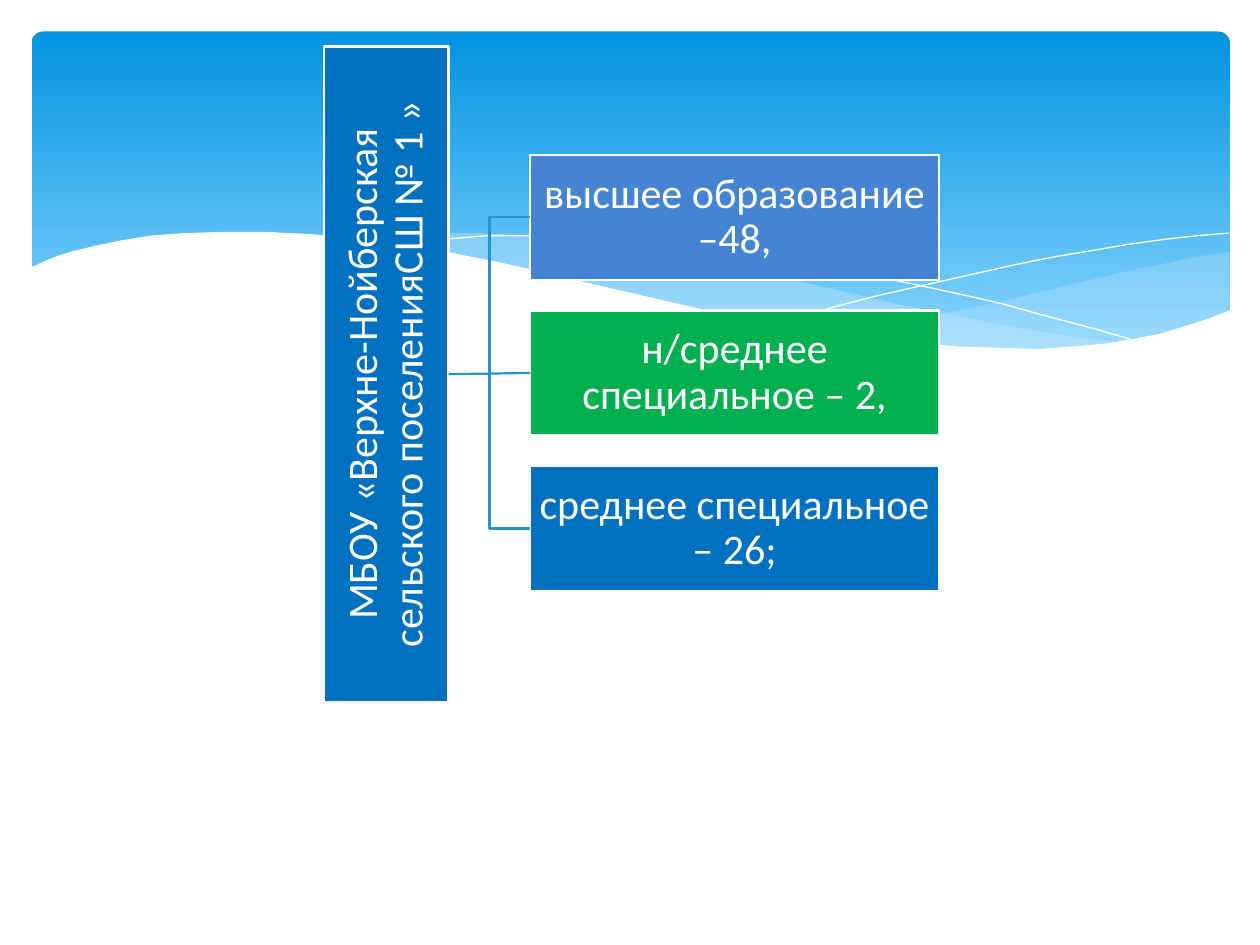
"""Build a slide with a school's staff education hierarchy over a wavy sky banner."""
import lxml.etree
import pptx
import pptx.dml.color
import pptx.enum.dml
import pptx.enum.shapes
import pptx.enum.text
import pptx.oxml.ns
import pptx.util

Inches, Pt = pptx.util.Inches, pptx.util.Pt
qn = pptx.oxml.ns.qn

COLORS = {
    "sky_top": "0293E0", "sky_bottom": "83D3FE", "mist": "C6E7FC", "white": "FFFFFF",
    "blue": "0070C0", "light_blue": "4584D3", "green": "00B050", "link": "2792CB",
}
FONT, TEXT_SIZE = "Calibri", 24

SCHOOL = "МБОУ «Верхне-Нойберская сельского поселенияСШ № 1 »"
EDUCATION_LEVELS = [
    ("высшее образование –48,", "light_blue"),
    ("н/среднее специальное – 2,", "green"),
    ("среднее специальное – 26;", "blue"),
]
SCHOOL_LEFT, SCHOOL_TOP, SCHOOL_LENGTH = 2.57, 0.37, 5.2
LEVEL_LEFT, LEVEL_TOP, LEVEL_WIDTH, LEVEL_STEP = 4.21, 1.23, 3.24, 1.235
BOX_THICKNESS = 0.99

RIGHT_MIST = [
    (9.75, 2), (9.48, 2.04), (9.21, 2.1), (8.91, 2.16), (8.61, 2.23), (8.05, 2.37),
    (7.53, 2.48), (7.06, 2.57), (6.61, 2.65), (6.91, 2.69), (7.19, 2.72), (7.45, 2.75),
    (7.69, 2.77), (7.92, 2.77), (8.14, 2.78), (8.35, 2.77), (8.54, 2.76), (8.72, 2.74),
    (8.89, 2.72), (9.05, 2.69), (9.21, 2.65), (9.35, 2.62), (9.49, 2.57), (9.63, 2.52),
    (9.76, 2.47), (9.76, 2),
]
LONG_MIST = [
    (8.93, 2.73), (8.66, 2.69), (8.37, 2.65), (8.07, 2.6), (7.75, 2.54), (7.41, 2.47),
    (7.06, 2.4), (6.68, 2.31), (6.29, 2.22), (5.98, 2.14), (5.69, 2.08), (5.41, 2.03),
    (5.14, 1.98), (4.89, 1.94), (4.65, 1.91), (4.42, 1.89), (4.2, 1.87), (3.99, 1.86),
    (3.8, 1.85), (3.61, 1.85), (3.44, 1.86), (3.28, 1.87), (3.13, 1.88), (2.99, 1.89),
    (2.86, 1.91), (3.04, 1.94), (3.23, 1.96), (3.42, 1.99), (3.62, 2.03), (3.83, 2.07),
    (4.04, 2.11), (4.27, 2.16), (4.49, 2.22), (4.91, 2.32), (5.3, 2.4), (5.66, 2.48),
    (6.01, 2.55), (6.34, 2.61), (6.65, 2.66), (6.95, 2.7), (7.22, 2.74), (7.48, 2.76),
    (7.73, 2.77), (7.96, 2.78), (8.28, 2.78), (8.48, 2.77), (8.67, 2.76), (8.93, 2.73),
]
FALLING_CURVE = [
    (3.09, 1.95), (3.18, 1.94), (3.28, 1.92), (3.44, 1.9), (3.63, 1.89), (3.87, 1.87),
    (4.16, 1.87), (4.5, 1.88), (4.89, 1.9), (5.33, 1.94), (5.82, 2), (6.36, 2.08),
    (6.65, 2.13), (6.95, 2.19), (7.27, 2.26), (7.6, 2.33), (7.95, 2.41), (8.31, 2.51),
    (8.69, 2.61), (9.07, 2.72),
]
RISING_CURVE = [
    (6.13, 2.57), (6.53, 2.46), (6.95, 2.35), (7.48, 2.23), (8.06, 2.1), (8.36, 2.04),
    (8.66, 1.99), (8.95, 1.94), (9.24, 1.9), (9.51, 1.87), (9.75, 1.85),
]
WHITE_WAVE = [
    (9.77, 2.46), (9.59, 2.53), (9.4, 2.59), (9.2, 2.65), (8.99, 2.69), (8.75, 2.73),
    (8.5, 2.75), (8.23, 2.77), (7.93, 2.76), (7.61, 2.75), (7.26, 2.72), (6.88, 2.68),
    (6.48, 2.62), (6.03, 2.54), (5.55, 2.45), (5.03, 2.33), (4.47, 2.2), (4.18, 2.13),
    (3.91, 2.07), (3.65, 2.02), (3.4, 1.97), (3.16, 1.94), (2.92, 1.9), (2.71, 1.88),
    (2.5, 1.86), (2.3, 1.85), (2.11, 1.84), (1.77, 1.84), (1.46, 1.85), (1.19, 1.87),
    (0.95, 1.91), (0.76, 1.95), (0.59, 1.99), (0.46, 2.03), (0.36, 2.07), (0.23, 2.13),
    (0.23, 3.29), (9.77, 3.29),
]
WAVES = [
    (RIGHT_MIST, "mist", 29), (LONG_MIST, "mist", 40), (FALLING_CURVE, None, None),
    (RISING_CURVE, None, None), (WHITE_WAVE, "white", 100),
]


def rgb(name):
    return pptx.dml.color.RGBColor.from_string(COLORS[name])


def add_banner(shapes):
    banner = shapes.add_shape(
        pptx.enum.shapes.MSO_SHAPE.ROUNDED_RECTANGLE,
        Inches(0.25), Inches(0.25), Inches(9.51), Inches(2.7))
    banner.adjustments[0] = 0.034
    banner.shadow.inherit = False
    banner.line.fill.background()
    banner.fill.gradient()
    banner.fill.gradient_angle = 270
    for stop, name, position in zip(
            banner.fill.gradient_stops, ("sky_top", "sky_bottom"), (0, 0.9)):
        stop.color.rgb = rgb(name)
        stop.position = position


def add_wave(shapes, points, fill, opacity):
    (start_x, start_y), *rest = [(round(x * 100), round(y * 100)) for x, y in points]
    builder = shapes.build_freeform(start_x, start_y, scale=Inches(0.01))
    builder.add_line_segments(rest, close=fill is not None)
    wave = builder.convert_to_shape()
    wave.shadow.inherit = False
    if fill is None:
        wave.fill.background()
        wave.line.color.rgb = rgb("white")
        wave.line.width = Pt(0)
        return
    wave.line.fill.background()
    wave.fill.solid()
    wave.fill.fore_color.rgb = rgb(fill)
    if opacity < 100:
        color = wave.fill._xPr.find(qn("a:solidFill"))[0]
        lxml.etree.SubElement(color, qn("a:alpha"), val=str(opacity * 1000))


def add_box(shapes, text, fill, left, top, width, height):
    box = shapes.add_shape(
        pptx.enum.shapes.MSO_SHAPE.RECTANGLE,
        Inches(left), Inches(top), Inches(width), Inches(height))
    box.shadow.inherit = False
    box.fill.solid()
    box.fill.fore_color.rgb = rgb(fill)
    box.line.color.rgb = rgb("white")
    box.line.width = Pt(1.25)
    frame = box.text_frame
    frame.text = text
    frame.word_wrap = True
    frame.vertical_anchor = pptx.enum.text.MSO_ANCHOR.MIDDLE
    frame.margin_left = frame.margin_right = Inches(0.02)
    frame.margin_top = frame.margin_bottom = Inches(0.02)
    paragraph = frame.paragraphs[0]
    paragraph.alignment = pptx.enum.text.PP_ALIGN.CENTER
    paragraph.line_spacing = 0.9
    font = paragraph.runs[0].font
    font.name, font.size, font.color.rgb = FONT, Pt(TEXT_SIZE), rgb("white")
    return box


def add_link(shapes, school, level, kind):
    link = shapes.add_connector(kind, 0, 0, 0, 0)
    link.begin_connect(school, 3)
    link.end_connect(level, 1)
    link.line.color.rgb = rgb("link")
    link.line.width = Pt(1.25)
    lxml.etree.SubElement(link._element.spPr, qn("a:effectLst"))


def main():
    presentation = pptx.Presentation()
    presentation.slide_width, presentation.slide_height = Inches(10), Inches(7.5)
    shapes = presentation.slides.add_slide(presentation.slide_layouts[6]).shapes

    add_banner(shapes)
    for points, fill, opacity in WAVES:
        add_wave(shapes, points, fill, opacity)

    school = add_box(shapes, SCHOOL, "blue", SCHOOL_LEFT, SCHOOL_TOP,
                     BOX_THICKNESS, SCHOOL_LENGTH)
    school.text_frame._txBody.bodyPr.set("vert", "vert270")
    levels = [
        add_box(shapes, text, fill, LEVEL_LEFT, LEVEL_TOP + row * LEVEL_STEP,
                LEVEL_WIDTH, BOX_THICKNESS)
        for row, (text, fill) in enumerate(EDUCATION_LEVELS)
    ]
    connector = pptx.enum.shapes.MSO_CONNECTOR
    middle = len(levels) // 2
    for row, level in enumerate(levels):
        add_link(shapes, school, level,
                 connector.STRAIGHT if row == middle else connector.ELBOW)

    presentation.save("out.pptx")


if __name__ == "__main__":
    main()
